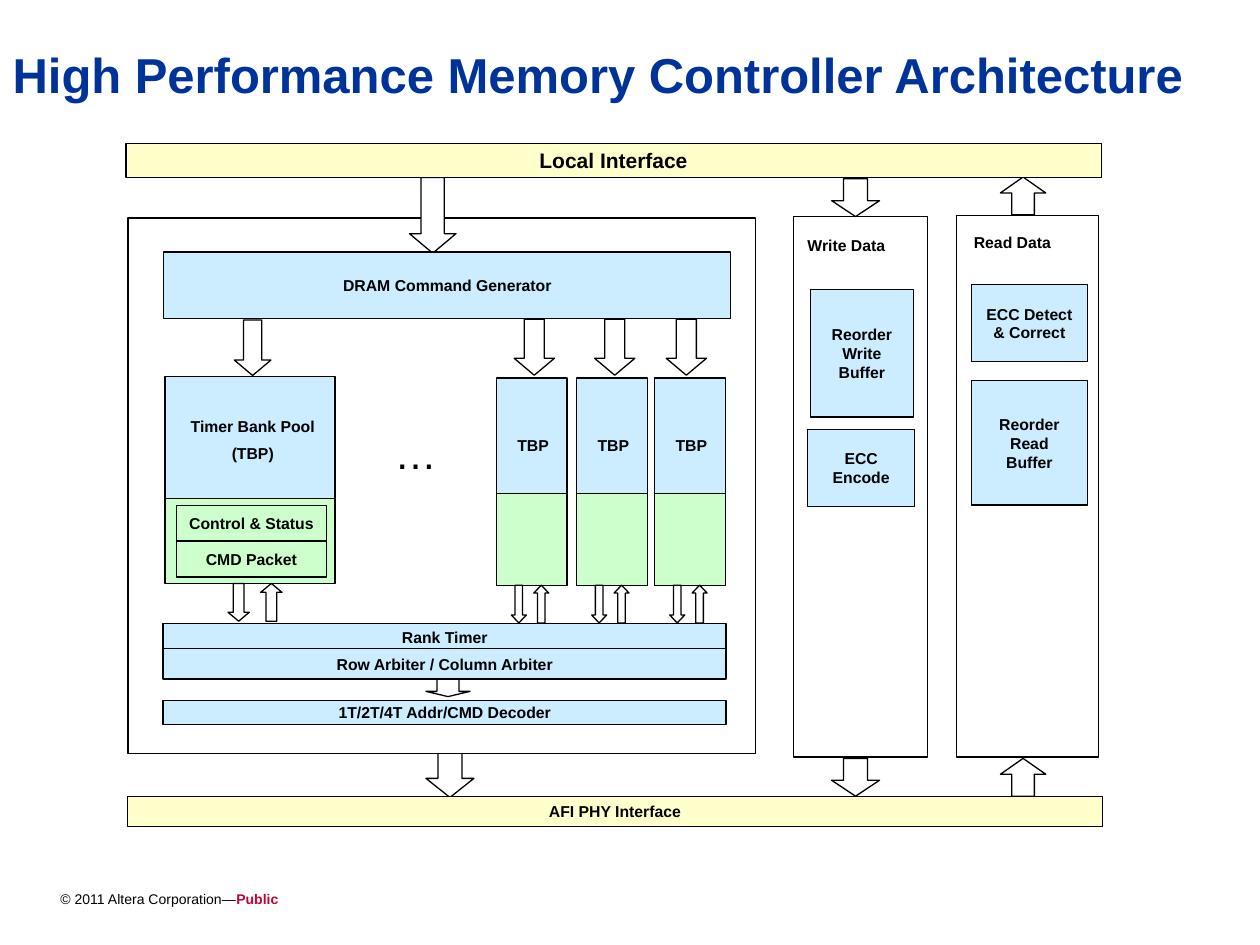
"""Build the memory controller architecture slide."""
from pptx import Presentation
from pptx.dml.color import RGBColor
from pptx.enum.shapes import MSO_SHAPE
from pptx.enum.text import MSO_ANCHOR, MSO_AUTO_SIZE, PP_ALIGN
from pptx.util import Pt

RECTANGLE, DOWN, UP = MSO_SHAPE.RECTANGLE, MSO_SHAPE.DOWN_ARROW, MSO_SHAPE.UP_ARROW
TOP, MIDDLE = MSO_ANCHOR.TOP, MSO_ANCHOR.MIDDLE
LEFT, CENTER = PP_ALIGN.LEFT, PP_ALIGN.CENTER
NO_FIT = MSO_AUTO_SIZE.NONE

BLACK = RGBColor(0x00, 0x00, 0x00)
WHITE = RGBColor(0xFF, 0xFF, 0xFF)
NAVY = RGBColor(0x00, 0x33, 0x99)
CRIMSON = RGBColor(0xC1, 0x04, 0x35)
BLUE = RGBColor(0xCC, 0xEC, 0xFF)
GREEN = RGBColor(0xCC, 0xFF, 0xCC)
YELLOW = RGBColor(0xFF, 0xFF, 0xCC)


def write_text(frame, text, size=9, color=BLACK, bold=True, align=CENTER,
               anchor=MIDDLE, wrap=False, gap=0):
    """Fill a text frame with one paragraph per line of text."""
    frame.auto_size = NO_FIT
    frame.word_wrap = wrap
    frame.vertical_anchor = anchor
    for index, line in enumerate(text.split("\n")):
        paragraph = frame.add_paragraph() if index else frame.paragraphs[0]
        paragraph.alignment = align
        if index and gap:
            paragraph.space_before = Pt(gap)
        run = paragraph.add_run()
        run.text = line
        run.font.name = "Arial"
        run.font.size = Pt(size)
        run.font.bold = bold
        run.font.color.rgb = color


def add_outlined(slide, preset, left, top, width, height, fill=None):
    """Add a thin black outlined shape, hollow unless a fill is given."""
    shape = slide.shapes.add_shape(preset, Pt(left), Pt(top), Pt(width), Pt(height))
    shape.shadow.inherit = False
    if fill is None:
        shape.fill.background()
    else:
        shape.fill.solid()
        shape.fill.fore_color.rgb = fill
    shape.line.color.rgb = BLACK
    shape.line.width = Pt(0.75)
    return shape


def add_block(slide, left, top, width, height, fill=None, text="", size=9):
    """Add a rectangular block with an optional centred label."""
    block = add_outlined(slide, RECTANGLE, left, top, width, height, fill)
    if text:
        write_text(block.text_frame, text, size=size)


def add_arrow(slide, direction, left, top, width, height, head=0.42, fill=None):
    """Add a block arrow with the given head proportion."""
    arrow = add_outlined(slide, direction, left, top, width, height, fill)
    arrow.adjustments[0] = 0.5
    arrow.adjustments[1] = head


def add_label(slide, left, top, width, height, text, **style):
    """Add free-standing wrapped text and return its frame."""
    frame = slide.shapes.add_textbox(Pt(left), Pt(top), Pt(width), Pt(height)).text_frame
    write_text(frame, text, anchor=TOP, wrap=True, **style)
    return frame


def add_title(slide):
    """Place and format the slide title."""
    title = slide.shapes.title
    title.left, title.top, title.width, title.height = Pt(0), Pt(21.6), Pt(708.5), Pt(72)
    write_text(title.text_frame, "High Performance Memory Controller Architecture",
               size=28, color=NAVY, align=LEFT, anchor=TOP, wrap=True)


def add_footer(slide):
    """Add the copyright line with its highlighted classification."""
    frame = add_label(slide, 27.4, 505.4, 334.8, 30.2, "© 2011 Altera Corporation—",
                      size=8, bold=False, align=LEFT)
    level = frame.paragraphs[0].add_run()
    level.text = "Public"
    level.font.name = "Arial"
    level.font.size = Pt(8)
    level.font.bold = True
    level.font.color.rgb = CRIMSON


def add_timer_pool(slide):
    """Add the detailed timer bank pool with its arrows."""
    add_arrow(slide, DOWN, 133.9, 182.9, 20.9, 31.7)
    add_block(slide, 94.3, 284.4, 97.2, 49, GREEN)
    add_block(slide, 94.3, 215.3, 97.2, 69.8, BLUE)
    add_label(slide, 95.8, 234.7, 97.2, 35.3, "Timer Bank Pool\n(TBP)", gap=4.5)
    for top, text in ((288.7, "Control & Status"), (309.4, "CMD Packet")):
        add_block(slide, 100.8, top, 85.7, 20.4, text=text)
    for direction, left in ((DOWN, 130.3), (UP, 149)):
        add_arrow(slide, direction, left, 333.4, 12.2, 21.6)


def add_bank(slide, left, arrow_left):
    """Add one compact timer bank pool with its arrows."""
    add_arrow(slide, DOWN, arrow_left, 182.4, 23, 32)
    add_block(slide, left, 216, 40.3, 118.8, BLUE)
    add_block(slide, left, 282.2, 40.3, 52.6, GREEN)
    add_label(slide, left + 4.8, 245.5, 34.6, 18, "TBP", align=LEFT)
    for direction, offset in ((DOWN, 8.5), (UP, 21.3)):
        add_arrow(slide, direction, left + offset, 334.4, 8.6, 21.6, head=0.53)


def add_command_path(slide):
    """Add the command generator, timer banks, arbiters and decoder."""
    add_arrow(slide, DOWN, 243.4, 429.8, 27.4, 25.9)
    add_block(slide, 73.1, 124.6, 358.6, 306, WHITE)
    add_arrow(slide, DOWN, 234, 101.5, 26.6, 43.2, fill=WHITE)
    add_block(slide, 93.6, 144, 324, 38.2, BLUE, "DRAM Command Generator")
    add_timer_pool(slide)
    add_label(slide, 192.2, 240.5, 90.7, 36, "…", size=24, bold=False)
    for left, arrow_left in ((283.7, 293.8), (329.6, 339.8), (374.2, 380.7)):
        add_bank(slide, left, arrow_left)
    add_arrow(slide, DOWN, 243.4, 386.6, 25.2, 11.5, head=0.26)
    for top, height, text in ((356.4, 15.8, "Rank Timer"),
                              (370.8, 17.3, "Row Arbiter / Column Arbiter"),
                              (400.3, 13.7, "1T/2T/4T Addr/CMD Decoder")):
        add_block(slide, 93.2, top, 321.8, height, BLUE, text)


def add_data_path(slide, name, panel, label, arrow, stages):
    """Add a data panel with its label, end arrows and stage blocks."""
    add_block(slide, *panel)
    add_label(slide, *label, 74, 18, name, align=LEFT)
    direction, left, width, tops = arrow
    for top in tops:
        add_arrow(slide, direction, left, top, width, 21.6)
    for left, top, width, height, text in stages:
        add_block(slide, left, top, width, height, BLUE, text)


def main():
    """Assemble and save the slide."""
    deck = Presentation()
    deck.slide_width, deck.slide_height = Pt(720), Pt(540)
    slide = deck.slides.add_slide(deck.slide_layouts[5])
    add_title(slide)
    add_footer(slide)
    add_command_path(slide)
    add_data_path(slide, "Write Data", (453.6, 123.8, 76.3, 308.9), (454.3, 131),
                  (DOWN, 475.2, 27.4, (102.2, 433.4)),
                  ((463, 165.6, 59, 72.7, "Reorder\nWrite\nBuffer"),
                   (461.5, 245.5, 61.2, 43.9, "ECC\nEncode")))
    add_data_path(slide, "Read Data", (546.5, 123.1, 81.4, 309.6), (549.4, 129.6),
                  (UP, 571.7, 25.9, (101.2, 433.4)),
                  ((555.1, 162.7, 66.2, 43.9, "ECC Detect\n& Correct"),
                   (555.1, 217.4, 66.2, 71.3, "Reorder\nRead\nBuffer")))
    add_block(slide, 72, 82.1, 557.3, 19.4, YELLOW, "Local Interface", size=12)
    add_block(slide, 72.7, 455, 557.3, 17.3, YELLOW, "AFI PHY Interface")
    deck.save("out.pptx")


if __name__ == "__main__":
    main()
